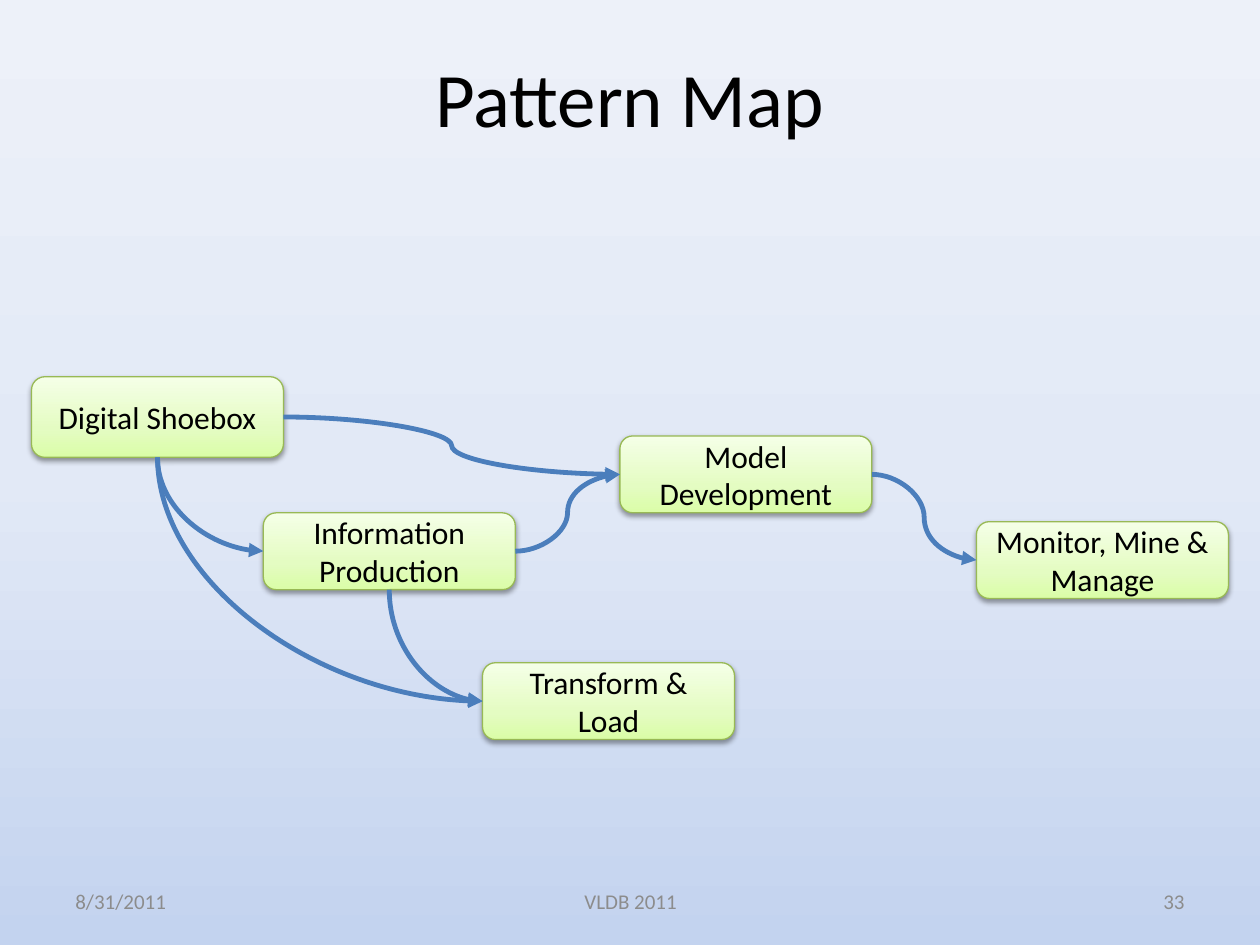
"""Build the Pattern Map slide: five pattern boxes joined by curved arrows."""
from dataclasses import dataclass

from lxml.etree import SubElement
from pptx import Presentation
from pptx.dml.color import RGBColor
from pptx.enum.shapes import MSO_CONNECTOR, MSO_SHAPE
from pptx.enum.text import MSO_ANCHOR, PP_ALIGN
from pptx.oxml.ns import qn
from pptx.shapes.autoshape import Shape
from pptx.shapes.connector import Connector
from pptx.slide import Slide
from pptx.util import Inches, Pt

TOP, LEFT, BOTTOM, RIGHT = range(4)


@dataclass(frozen=True)
class Theme:
    font: str = "Calibri"
    title_size: int = 44
    box_size: int = 18
    footer_size: int = 12
    ink: str = "000000"
    footer_ink: str = "8C8C8C"
    box_line: str = "98B955"
    box_line_width: float = 0.75
    arrow: str = "4B7EBC"
    arrow_width: float = 2.75
    background: tuple = ((0, "C3D3EF"), (50, "E2E9F6"), (100, "EDF1F9"))
    box_fill: tuple = ((0, "DAFDA7"), (35, "E4FCC2"), (100, "F5FFE7"))


@dataclass(frozen=True)
class Label:
    text: str
    left: float
    top: float
    width: float
    height: float
    size: int
    color: str
    align: PP_ALIGN


@dataclass(frozen=True)
class Box:
    text: str
    left: float
    top: float
    height: float = 0.61
    width: float = 2


@dataclass(frozen=True)
class Arrow:
    source: str
    side: int
    target: str


THEME = Theme()
LABELS = (
    Label("Pattern Map", 0.5, 0.25, 9, 1.03, THEME.title_size, THEME.ink, PP_ALIGN.CENTER),
    Label("8/31/2011", 0.5, 6.95, 2.33, 0.4, THEME.footer_size, THEME.footer_ink, PP_ALIGN.LEFT),
    Label("VLDB 2011", 3.42, 6.95, 3.17, 0.4, THEME.footer_size, THEME.footer_ink, PP_ALIGN.CENTER),
    Label("33", 7.17, 6.95, 2.33, 0.4, THEME.footer_size, THEME.footer_ink, PP_ALIGN.RIGHT),
)
BOXES = (
    Box("Digital Shoebox", 0.25, 2.99, 0.64),
    Box("Information Production", 2.09, 4.07),
    Box("Transform & Load", 3.83, 5.26),
    Box("Model Development", 4.92, 3.46),
    Box("Monitor, Mine & Manage", 7.75, 4.14),
)
ARROWS = (
    Arrow("Digital Shoebox", BOTTOM, "Information Production"),
    Arrow("Digital Shoebox", BOTTOM, "Transform & Load"),
    Arrow("Information Production", BOTTOM, "Transform & Load"),
    Arrow("Information Production", RIGHT, "Model Development"),
    Arrow("Model Development", RIGHT, "Monitor, Mine & Manage"),
    Arrow("Digital Shoebox", RIGHT, "Model Development"),
)


def write_text(shape: Shape, text: str, size: int, color: str, align: PP_ALIGN) -> None:
    frame = shape.text_frame
    frame.text = text
    frame.word_wrap = True
    frame.vertical_anchor = MSO_ANCHOR.MIDDLE
    paragraph = frame.paragraphs[0]
    paragraph.alignment = align
    font = paragraph.runs[0].font
    font.name, font.size = THEME.font, Pt(size)
    font.color.rgb = RGBColor.from_string(color)


def set_stops(parent, stops: tuple) -> None:
    stop_list = parent.find(".//" + qn("a:gsLst"))
    for old_stop in list(stop_list):
        stop_list.remove(old_stop)
    for position, color in stops:
        stop = SubElement(stop_list, qn("a:gs"), pos=str(position * 1000))
        SubElement(stop, qn("a:srgbClr"), val=color)


def paint_background(slide: Slide) -> None:
    fill = slide.background.fill
    fill.gradient()
    fill.gradient_angle = 90
    set_stops(slide.element.find(".//" + qn("p:bgPr")), THEME.background)


def add_label(slide: Slide, label: Label) -> None:
    area = map(Inches, (label.left, label.top, label.width, label.height))
    shape = slide.shapes.add_textbox(*area)
    write_text(shape, label.text, label.size, label.color, label.align)


def add_shadow(shape: Shape) -> None:
    shape.shadow.inherit = False
    effects = shape.element.spPr.find(qn("a:effectLst"))
    shadow = SubElement(effects, qn("a:outerShdw"), blurRad=str(Pt(3.1)),
                        dist=str(Pt(1.6)), dir="5400000", rotWithShape="0")
    color = SubElement(shadow, qn("a:srgbClr"), val="000000")
    SubElement(color, qn("a:alpha"), val="38000")


def add_box(slide: Slide, box: Box) -> Shape:
    area = map(Inches, (box.left, box.top, box.width, box.height))
    shape = slide.shapes.add_shape(MSO_SHAPE.ROUNDED_RECTANGLE, *area)
    shape.fill.gradient()
    shape.fill.gradient_angle = 90
    set_stops(shape.element.spPr, THEME.box_fill)
    shape.line.color.rgb = RGBColor.from_string(THEME.box_line)
    shape.line.width = Pt(THEME.box_line_width)
    add_shadow(shape)
    write_text(shape, box.text, THEME.box_size, THEME.ink, PP_ALIGN.CENTER)
    return shape


def bend_downward(connector: Connector) -> None:
    """Turn the curve so that it leaves downward and arrives rightward."""
    left, top, width, height = connector.left, connector.top, connector.width, connector.height
    connector.left = left + (width - height) // 2
    connector.top = top + (height - width) // 2
    connector.width, connector.height = height, width
    connector.rotation = 270
    properties = connector.element.spPr
    properties.find(qn("a:xfrm")).set("flipH", "1")
    properties.find(qn("a:prstGeom")).set("prst", "curvedConnector2")


def add_arrow(slide: Slide, arrow: Arrow, boxes: dict[str, Shape]) -> None:
    connector = slide.shapes.add_connector(MSO_CONNECTOR.CURVE, 0, 0, 0, 0)
    connector.begin_connect(boxes[arrow.source], arrow.side)
    connector.end_connect(boxes[arrow.target], LEFT)
    if arrow.side == BOTTOM:
        bend_downward(connector)
    connector.line.color.rgb = RGBColor.from_string(THEME.arrow)
    connector.line.width = Pt(THEME.arrow_width)
    properties = connector.element.spPr
    SubElement(properties.find(qn("a:ln")), qn("a:tailEnd"), type="triangle")
    SubElement(properties, qn("a:effectLst"))


def main() -> None:
    presentation = Presentation()
    presentation.slide_width, presentation.slide_height = Inches(10), Inches(7.5)
    slide = presentation.slides.add_slide(presentation.slide_layouts[6])
    paint_background(slide)
    for label in LABELS:
        add_label(slide, label)
    boxes = {box.text: add_box(slide, box) for box in BOXES}
    for arrow in ARROWS:
        add_arrow(slide, arrow, boxes)
    presentation.save("out.pptx")


if __name__ == "__main__":
    main()
